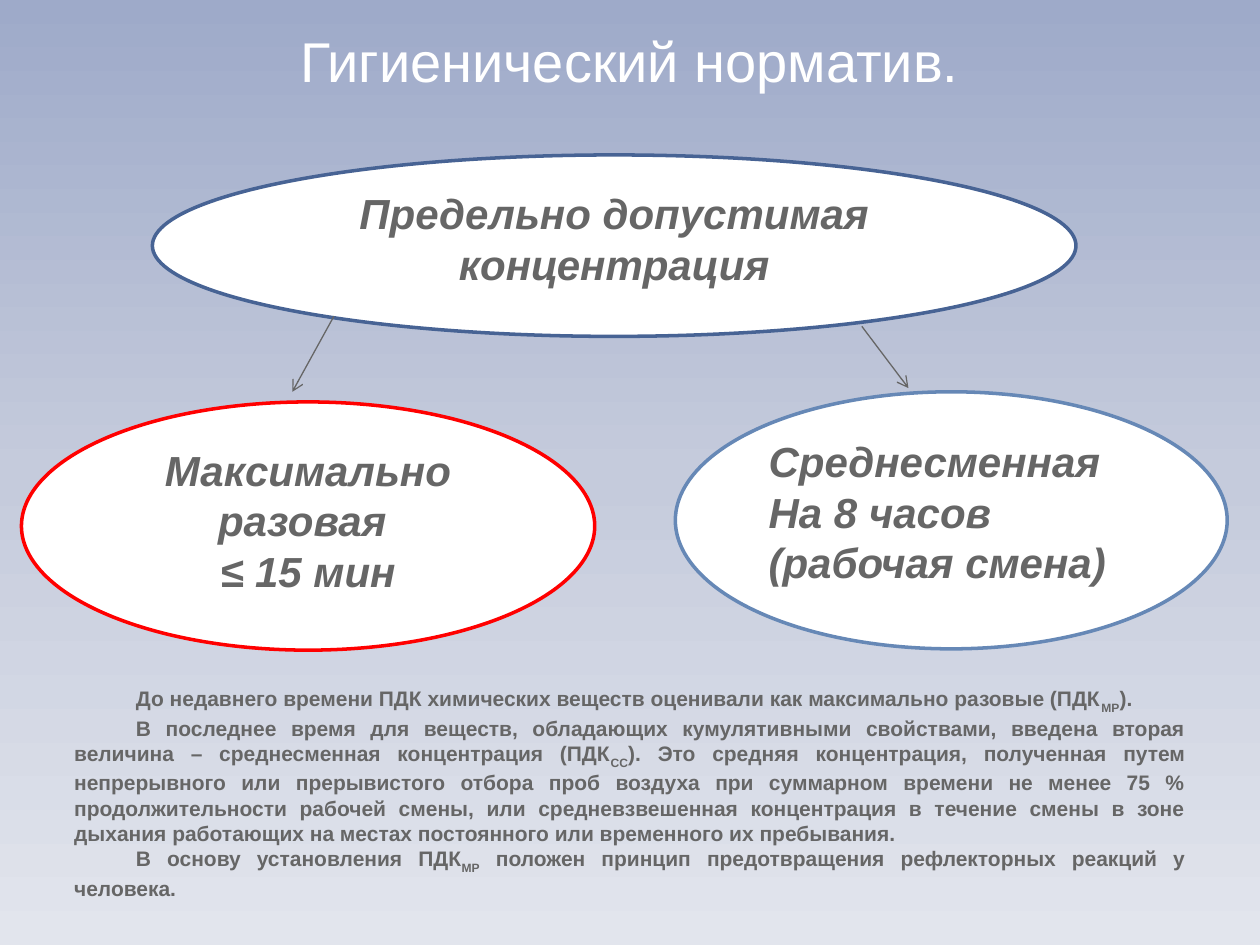
from copy import deepcopy

from lxml import etree
from pptx import Presentation
from pptx.dml.color import RGBColor
from pptx.enum.shapes import MSO_CONNECTOR, MSO_SHAPE
from pptx.enum.text import MSO_ANCHOR, PP_ALIGN
from pptx.oxml.ns import qn
from pptx.util import Inches, Pt

OVAL, STRAIGHT = MSO_SHAPE.OVAL, MSO_CONNECTOR.STRAIGHT
TOP, MIDDLE = MSO_ANCHOR.TOP, MSO_ANCHOR.MIDDLE
LEFT, CENTER, JUSTIFY = PP_ALIGN.LEFT, PP_ALIGN.CENTER, PP_ALIGN.JUSTIFY

WHITE = RGBColor(0xFF, 0xFF, 0xFF)
GRAY = RGBColor(0x66, 0x66, 0x66)
NAVY = RGBColor(0x47, 0x63, 0x94)
RED = RGBColor(0xFF, 0x00, 0x00)
BLUE = RGBColor(0x66, 0x88, 0xB6)
BACKGROUND = [
    (0, RGBColor(0x9E, 0xAA, 0xC9)),
    (0.5, RGBColor(0xC5, 0xCB, 0xDC)),
    (1, RGBColor(0xE2, 0xE5, 0xED)),
]

TITLE = "Гигиенический норматив."
# box, outline, alignment, paragraphs
OVALS = [
    ((1.21, 1.23, 7.33, 1.44), NAVY, CENTER, ["Предельно допустимая концентрация"]),
    ((0.17, 3.19, 4.55, 1.97), RED, CENTER, ["Максимально разовая ", "≤ 15 мин"]),
    ((5.36, 3.11, 4.38, 2.04), BLUE, LEFT,
     ["Среднесменная", "На 8 часов", "(рабочая смена)"]),
]
ARROWS = [(2.65, 2.51, 2.32, 3.11), (6.84, 2.59, 7.21, 3.08)]
# each paragraph: text, subscript, text
NOTES = [
    ("До недавнего времени ПДК химических веществ оценивали как максимально "
     "разовые (ПДК", "МР", "). "),
    ("В последнее время для веществ, обладающих кумулятивными свойствами, "
     "введена вторая величина – среднесменная концентрация (ПДК", "СС",
     "). Это средняя концентрация, полученная путем непрерывного или "
     "прерывистого отбора проб воздуха при суммарном времени не менее 75 % "
     "продолжительности рабочей смены, или средневзвешенная концентрация в "
     "течение смены в зоне дыхания работающих на местах постоянного или "
     "временного их пребывания."),
    ("В основу установления ПДК", "МР",
     " положен принцип предотвращения рефлекторных реакций у человека."),
]


def set_background(s):
    fill = s.background.fill
    fill.gradient()
    fill.gradient_angle = 270
    first = fill.gradient_stops[0]._gs
    first.addnext(deepcopy(first))
    for stop, (position, color) in zip(fill.gradient_stops, BACKGROUND):
        stop.position = position
        stop.color.rgb = color


def write(sp, paragraphs, size, color, align, anchor=TOP, bold=False, italic=False):
    """Fill a shape with paragraphs, each a sequence of runs; odd runs are subscripts."""
    tf = sp.text_frame
    tf.word_wrap = True
    tf.vertical_anchor = anchor
    for i, runs in enumerate(paragraphs):
        p = tf.paragraphs[0] if i == 0 else tf.add_paragraph()
        p.alignment = align
        for j, text in enumerate(runs):
            r = p.add_run()
            r.text = text
            r.font.name = "Arial"
            r.font.size = Pt(size)
            r.font.bold = bold
            r.font.italic = italic
            r.font.color.rgb = color
            if j % 2:
                r._r.get_or_add_rPr().set("baseline", "-30000")
    return tf


def add_oval(s, box, outline, align, lines):
    sp = s.shapes.add_shape(OVAL, *map(Inches, box))
    sp.shadow.inherit = False
    sp.fill.solid()
    sp.fill.fore_color.rgb = WHITE
    sp.line.color.rgb = outline
    sp.line.width = Pt(2)
    write(sp, [[line] for line in lines], 24, GRAY, align, bold=True, italic=True)


def add_arrow(s, ends):
    arrow = s.shapes.add_connector(STRAIGHT, *map(Inches, ends))
    arrow.line.color.rgb = GRAY
    arrow.line.width = Pt(0.75)
    etree.SubElement(arrow.line._get_or_add_ln(), qn("a:tailEnd"), type="arrow")
    etree.SubElement(arrow._element.spPr, qn("a:effectLst"))


def add_notes(s):
    sp = s.shapes.add_textbox(*map(Inches, (0.49, 5.39, 9.02, 1.72)))
    tf = write(sp, NOTES, 12, GRAY, JUSTIFY, bold=True)
    for p in tf.paragraphs:
        pPr = p._p.get_or_add_pPr()
        pPr.set("marL", "0")
        pPr.set("indent", str(Inches(0.49)))


def main():
    prs = Presentation()
    prs.slide_width, prs.slide_height = Inches(10), Inches(7.5)
    s = prs.slides.add_slide(prs.slide_layouts[6])
    set_background(s)
    title = s.shapes.add_textbox(*map(Inches, (0.5, 0, 9, 0.95)))
    write(title, [[TITLE]], 32, WHITE, CENTER, MIDDLE)
    for oval in OVALS:
        add_oval(s, *oval)
    for ends in ARROWS:
        add_arrow(s, ends)
    add_notes(s)
    prs.save("out.pptx")


if __name__ == "__main__":
    main()
